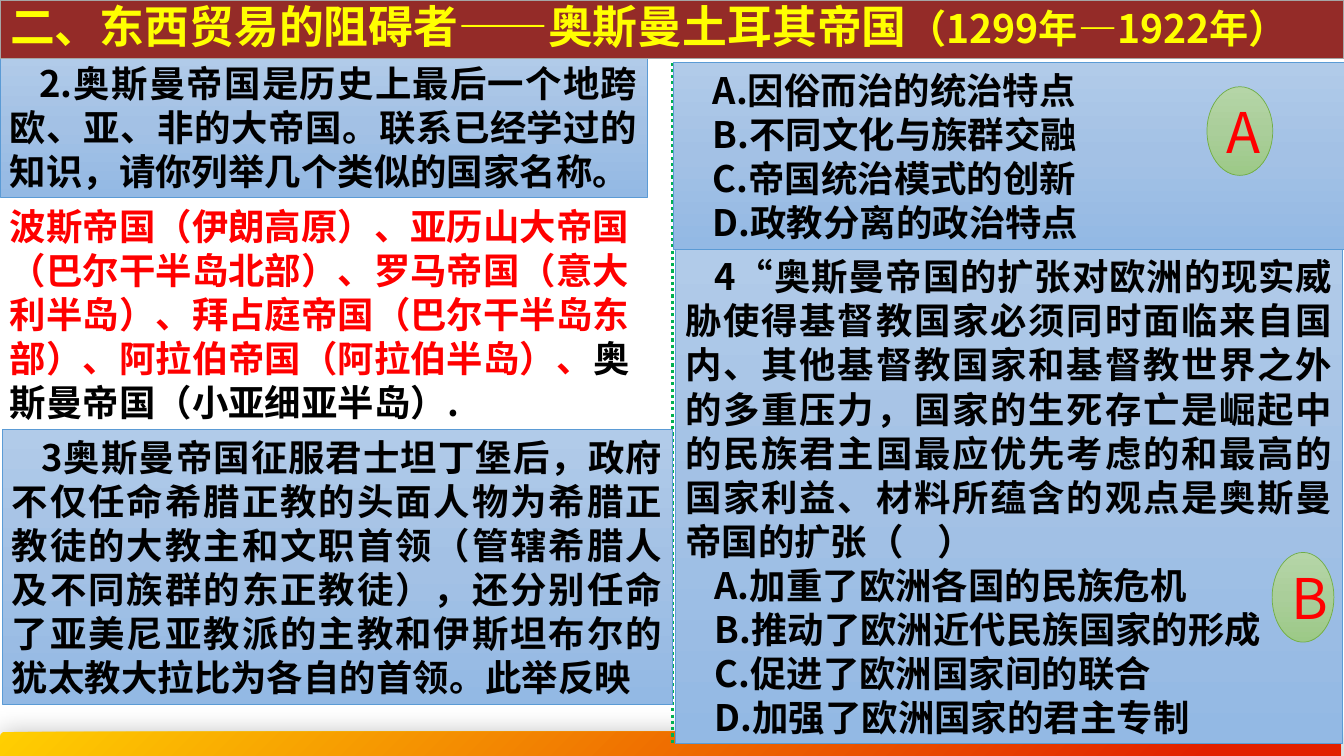
import pptx
import pptx.util
import pptx.dml.color
import pptx.enum.text
import pptx.enum.shapes
import pptx.enum.dml
import pptx.oxml
import pptx.oxml.ns

SHAPE = pptx.enum.shapes.MSO_SHAPE
ALIGN = pptx.enum.text.PP_ALIGN
ANCHOR = pptx.enum.text.MSO_ANCHOR
BLUE = [(0, "B1CBE9"), (50, "A3C1E5"), (100, "93B9E4")]
GREEN = [(0, "B5D5A7"), (50, "AACE9A"), (100, "9CC987")]
ORANGE = [(0, "FFCF01"), (90, "E22000")]
BLACK, RED, YELLOW = "000000", "FF0000", "FFFF00"


def rgb(value):
    return pptx.dml.color.RGBColor.from_string(value)


def xml(tag, attrs="", inner=""):
    ns = pptx.oxml.ns.nsdecls("a")
    return pptx.oxml.parse_xml(f"<a:{tag} {ns} {attrs}>{inner}</a:{tag}>")


class Deck:
    font = "Noto Sans CJK SC"
    size = 26
    leading = 31.5
    indent = 0.29

    def __init__(self):
        self.prs = pptx.Presentation()
        self.prs.slide_width = pptx.util.Inches(13.33)
        self.prs.slide_height = pptx.util.Inches(7.5)
        self.s = self.prs.slides.add_slide(self.prs.slide_layouts[1])

    def grid(self, x, y, w, h):
        col, row = self.prs.slide_width / 100, self.prs.slide_height / 100
        return [round(v) for v in (x * col, y * row, w * col, h * row)]

    def place(self, sp, box):
        sp.left, sp.top, sp.width, sp.height = self.grid(*box)
        self.s.shapes._spTree.append(sp._element)
        return sp

    def gradient(self, sp, stops, angle=90):
        sp.fill.gradient()
        sp.fill.gradient_angle = 360 - angle
        gs = sp._element.spPr.find(".//" + pptx.oxml.ns.qn("a:gsLst"))
        gs.clear()
        for pos, color in stops:
            gs.append(xml("gs", f'pos="{pos * 1000}"', f'<a:srgbClr val="{color}"/>'))

    def outline(self, sp, color, width=0.5):
        sp.line.color.rgb = rgb(color)
        sp.line.width = pptx.util.Pt(width)

    def shape(self, kind, box, stops, line=None, angle=90):
        sp = self.s.shapes.add_shape(kind, *self.grid(*box))
        sp.shadow.inherit = False
        self.gradient(sp, stops, angle)
        if line:
            self.outline(sp, line)
        else:
            sp.line.fill.background()
        return sp

    def frame(self, sp, anchor=ANCHOR.MIDDLE):
        tf = sp.text_frame
        tf.word_wrap = True
        tf.auto_size = pptx.enum.text.MSO_AUTO_SIZE.NONE
        tf.vertical_anchor = anchor
        tf.margin_left = tf.margin_right = pptx.util.Inches(0.1)
        tf.margin_top = tf.margin_bottom = pptx.util.Inches(0.05)
        return tf

    def run(self, p, text, color, size=size, bold=True):
        r = p.add_run()
        r.text = text
        r.font.size = pptx.util.Pt(size)
        r.font.bold = bold
        r.font.name = self.font
        r.font.color.rgb = rgb(color)
        r.font._element.find(pptx.oxml.ns.qn("a:latin")).addnext(
            xml("ea", f'typeface="{self.font}"'))

    def paragraphs(self, tf, texts, tab=None):
        for i, text in enumerate(texts):
            p = tf.add_paragraph() if i else tf.paragraphs[0]
            p.alignment = ALIGN.JUSTIFY
            p.line_spacing = pptx.util.Pt(self.leading)
            p.space_before = pptx.util.Pt(0)
            pPr = p._p.get_or_add_pPr()
            pPr.set("marL", "0")
            pPr.set("indent", str(pptx.util.Inches(self.indent)))
            pPr.append(xml("buNone"))
            if tab and "\t" in text:
                pos = pptx.util.Inches(tab)
                pPr.append(xml("tabLst", "", f'<a:tab pos="{pos}" algn="l"/>'))
            self.run(p, text, BLACK)

    def panel(self, box, texts, tab=None):
        sp = self.shape(SHAPE.RECTANGLE, box, BLUE, "5B9BD5")
        self.paragraphs(self.frame(sp), texts, tab)

    def options(self, box, texts):
        sp = self.place(self.s.placeholders[1], box)
        self.gradient(sp, BLUE)
        self.outline(sp, "5B9BD5")
        self.paragraphs(self.frame(sp), texts)

    def answer(self, box, parts):
        sp = self.s.shapes.add_textbox(*self.grid(*box))
        p = self.frame(sp, ANCHOR.TOP).paragraphs[0]
        p.line_spacing = pptx.util.Pt(self.leading)
        for text, color in parts:
            self.run(p, text, color)

    def badge(self, box, letter):
        sp = self.shape(SHAPE.OVAL, box, GREEN, "70AD47")
        p = self.frame(sp).paragraphs[0]
        p.alignment = ALIGN.CENTER
        self.run(p, letter, RED, 40, False)

    def title(self, box, parts):
        sp = self.place(self.s.shapes.title, box)
        sp.fill.solid()
        sp.fill.fore_color.rgb = rgb("942B28")
        self.outline(sp, "A5A5A5", 1)
        p = self.frame(sp).paragraphs[0]
        p.alignment = ALIGN.LEFT
        p.line_spacing = 0.9
        for text, size in parts:
            self.run(p, text, YELLOW, size)

    def divider(self, x, top, bottom):
        x, top, _, bottom = self.grid(x, top, 0, bottom)
        c = self.s.shapes.add_connector(
            pptx.enum.shapes.MSO_CONNECTOR.STRAIGHT, x, top, x, bottom)
        self.outline(c, "00B050", 2.25)
        c.line.dash_style = pptx.enum.dml.MSO_LINE.ROUND_DOT
        c._element.spPr.append(xml("effectLst"))

    def footer(self, box):
        sp = self.shape(SHAPE.ROUNDED_RECTANGLE, box, ORANGE, angle=45)
        effects = sp._element.spPr.find(pptx.oxml.ns.qn("a:effectLst"))
        effects.append(xml(
            "outerShdw", 'blurRad="226000" dist="38100" dir="5220000" rotWithShape="0"',
            '<a:srgbClr val="000000"><a:alpha val="33000"/></a:srgbClr>'))


def main():
    d = Deck()
    d.footer((0, 96.8, 99.75, 3.87))
    d.divider(50.02, 8.27, 98.27)
    d.panel((0, 7.33, 48.2, 18.8), [
        "2.奥斯曼帝国是历史上最后一个地跨欧、亚、非的大帝国。联系已经学过的知识，请你列举几个类似的国家名称。"])
    d.answer((0, 26.27, 48.5, 30.5), [
        ("波斯帝国（伊朗高原）、亚历山大帝国（巴尔干半岛北部）、罗马帝国（意大利半岛）、"
         "拜占庭帝国（巴尔干半岛东部）、阿拉伯帝国（阿拉伯半岛）、", RED),
        ("奥斯曼帝国（小亚细亚半岛）.", BLACK)])
    d.panel((0.15, 56.8, 49.9, 36.4), [
        "3奥斯曼帝国征服君士坦丁堡后，政府不仅任命希腊正教的头面人物为希腊正教徒的大教主和文职首领"
        "（管辖希腊人及不同族群的东正教徒），还分别任命了亚美尼亚教派的主教和伊斯坦布尔的犹太教大拉比"
        "为各自的首领。此举反映"])
    d.panel((50.25, 32.93, 49.65, 65.47), [
        "4“奥斯曼帝国的扩张对欧洲的现实威胁使得基督教国家必须同时面临来自国内、其他基督教国家和基督教"
        "世界之外的多重压力，国家的生死存亡是崛起中的民族君主国最应优先考虑的和最高的国家利益、"
        "材料所蕴含的观点是奥斯曼帝国的扩张（\t）",
        "A.加重了欧洲各国的民族危机",
        "B.推动了欧洲近代民族国家的形成",
        "C.促进了欧洲国家间的联合",
        "D.加强了欧洲国家的君主专制"], tab=3.05)
    d.badge((94.65, 73.07, 4.6, 11.87), "B")
    d.options((50.1, 8.27, 49.9, 24.67), [
        "A.因俗而治的统治特点",
        "B.不同文化与族群交融",
        "C.帝国统治模式的创新",
        "D.政教分离的政治特点"])
    d.badge((89.8, 11.47, 4.9, 11.73), "A")
    d.title((0, 0, 100, 7.73), [
        ("二、东西贸易的阻碍者——奥斯曼土耳其帝国", 32),
        ("（1299年—1922年）", 28)])
    d.prs.save("out.pptx")


if __name__ == "__main__":
    main()
